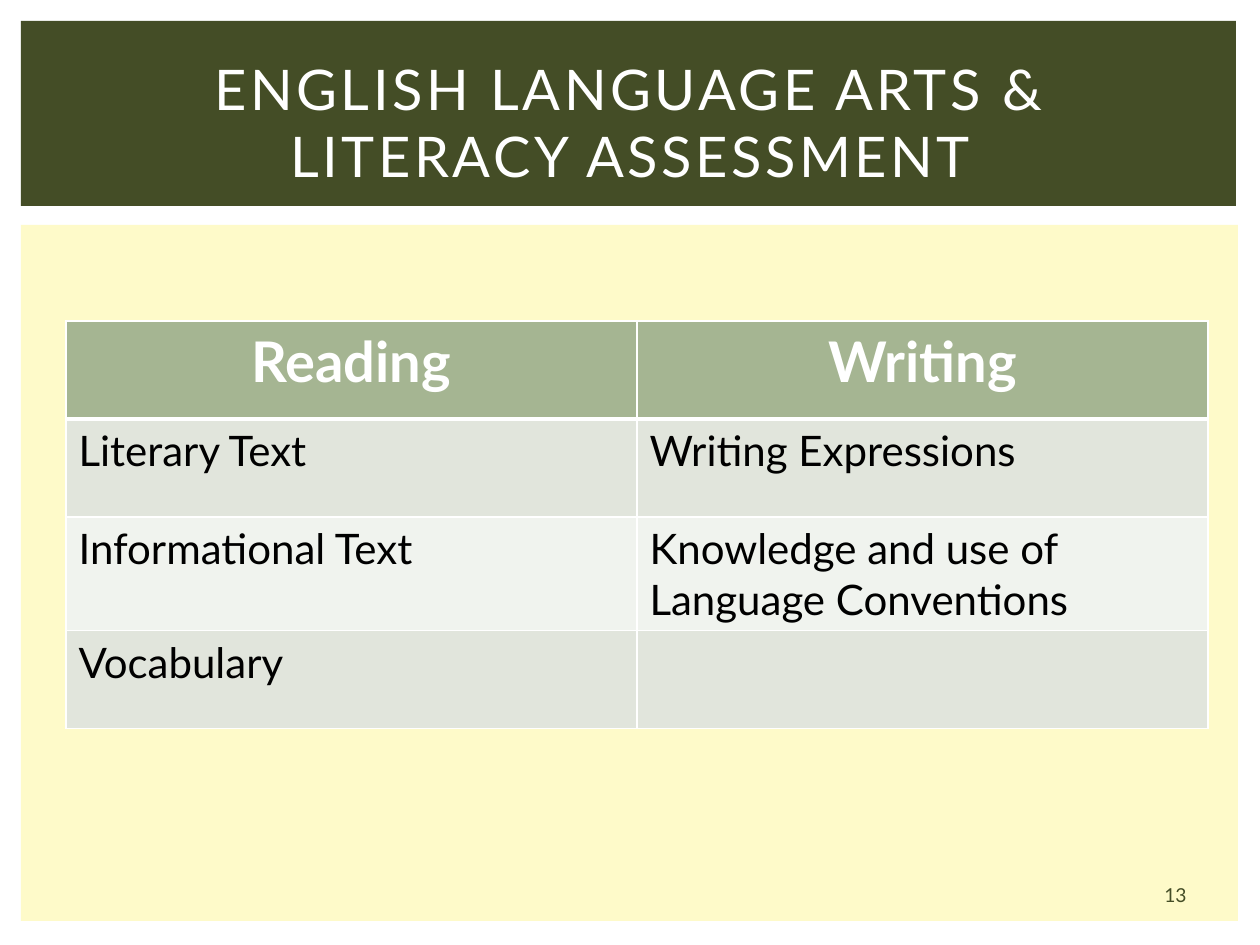
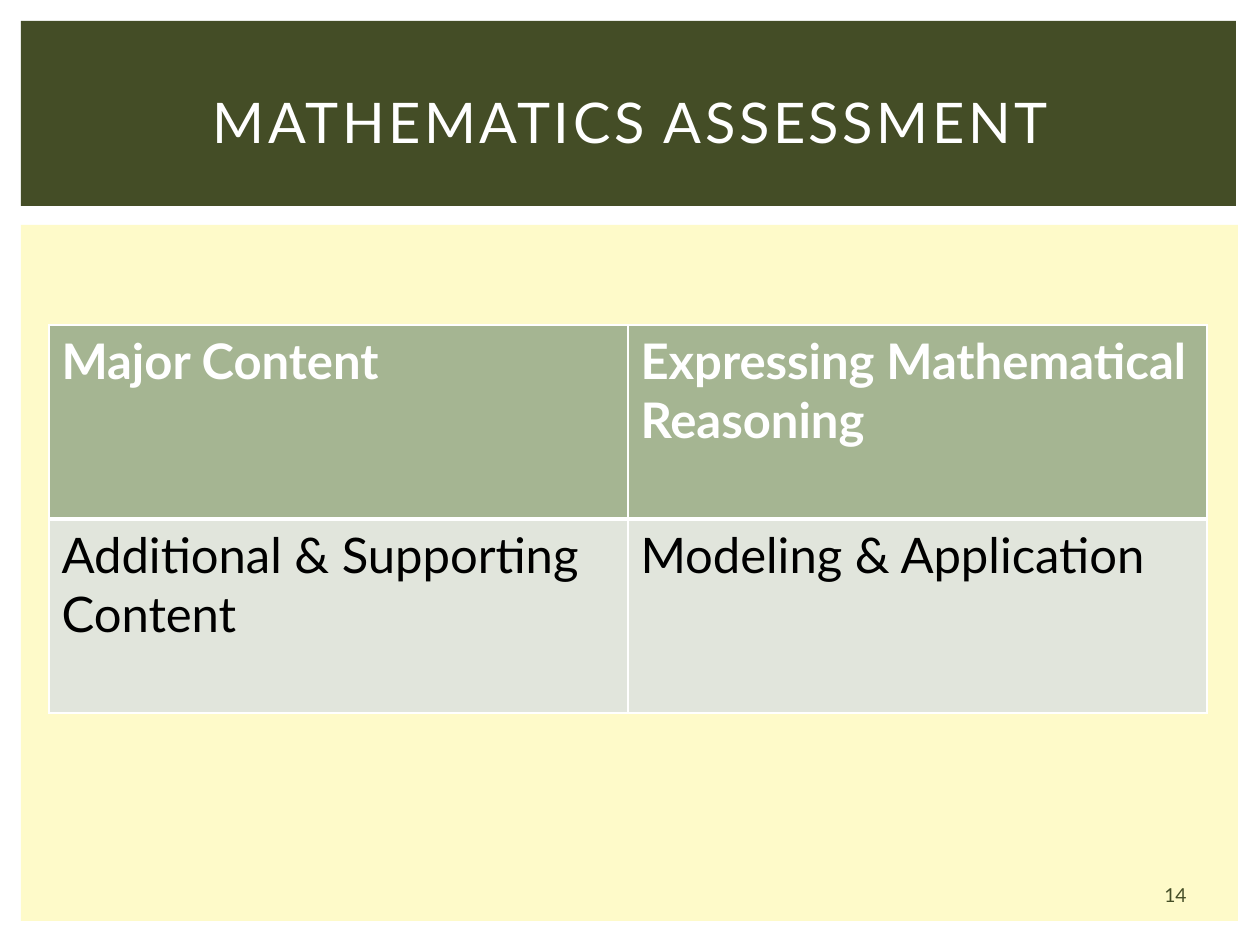
import pptx
import pptx.util
import pptx.dml.color
import pptx.enum.shapes
import pptx.enum.text
import pptx.oxml.ns
import lxml.etree

PX = 914400 / 126
FONT = "Lato"
HUES = {
    "white": "FFFFFF",
    "black": "000000",
    "dark": "444D26",
    "cream": "FEFAC9",
    "sage": "A5B592",
    "mist": "E1E5DC",
    "pale": "F0F3EE",
}
ALIGN = pptx.enum.text.PP_ALIGN


def px(num):
    return pptx.util.Emu(round(num * PX))


def hue(name):
    return pptx.dml.color.RGBColor.from_string(HUES[name])


def write(frame, text, size=24, color="black", bold=False, align=ALIGN.LEFT, space=0):
    para = frame.paragraphs[0]
    para.alignment = align
    run = para.add_run()
    run.text = text
    font = run.font
    font.name = FONT
    font.size = pptx.util.Pt(size)
    font.bold = bold
    font.color.rgb = hue(color)
    if space:
        font._element.set("spc", str(space * 100))


def block(slide, area, color):
    kind = pptx.enum.shapes.MSO_SHAPE.RECTANGLE
    shape = slide.shapes.add_shape(kind, *map(px, area))
    shape.shadow.inherit = False
    shape.fill.solid()
    shape.fill.fore_color.rgb = hue(color)
    shape.line.fill.background()


def label(slide, area, text, **style):
    frame = slide.shapes.add_textbox(*map(px, area)).text_frame
    frame.word_wrap = True
    frame.vertical_anchor = pptx.enum.text.MSO_ANCHOR.MIDDLE
    write(frame, text, align=ALIGN.CENTER, **style)


def edge(cell, side, width):
    name = pptx.oxml.ns.qn
    props = cell._tc.get_or_add_tcPr()
    line = lxml.etree.SubElement(props, name(f"a:ln{side}"), w=str(pptx.util.Pt(width)))
    fill = lxml.etree.SubElement(line, name("a:solidFill"))
    lxml.etree.SubElement(fill, name("a:srgbClr"), val=HUES["white"])


def paint(cell, row):
    thick = {(0, "B"), (1, "T")}
    for side in "LRTB":
        edge(cell, side, 3 if (row, side) in thick else 1)
    cell.fill.solid()
    cell.fill.fore_color.rgb = hue("sage" if row == 0 else "mist" if row % 2 else "pale")


def grid(slide, left, top, width, height, rows, head, body):
    cols = len(rows[0])
    area = map(px, (left, top, width, height * len(rows)))
    table = slide.shapes.add_table(len(rows), cols, *area).table
    for row, texts in enumerate(rows):
        table.rows[row].height = px(height)
        for col, text in enumerate(texts):
            cell = table.cell(row, col)
            paint(cell, row)
            if text:
                write(cell.text_frame, text, **(body if row else head))


def page(deck, title, number):
    slide = deck.slides.add_slide(deck.slide_layouts[6])
    block(slide, (21, 225, 1217, 696), "cream")
    block(slide, (21, 21, 1215, 185), "dark")
    label(slide, (53, 49, 1155, 145), title, size=32, color="white", space=2)
    label(slide, (1135, 876, 81, 38), str(number), size=11, color="dark")
    return slide


def main():
    deck = pptx.Presentation()
    deck.slide_width, deck.slide_height = px(1260), px(945)

    slide = page(deck, "ENGLISH LANGUAGE ARTS & LITERACY ASSESSMENT", 13)
    rows = [
        ("Reading", "Writing"),
        ("Literary Text", "Writing Expressions"),
        ("Informational Text", "Knowledge and use of Language Conventions"),
        ("Vocabulary", ""),
    ]
    head = dict(size=32, color="white", bold=True, align=ALIGN.CENTER)
    grid(slide, 66, 321, 1142, 98, rows, head, dict(size=24))

    slide = page(deck, "MATHEMATICS ASSESSMENT", 14)
    rows = [
        ("Major Content", "Expressing Mathematical Reasoning"),
        ("Additional & Supporting Content", "Modeling & Application"),
    ]
    head = dict(size=28, color="white", bold=True)
    grid(slide, 49, 325, 1158, 194, rows, head, dict(size=28))

    deck.save("out.pptx")


if __name__ == "__main__":
    main()
